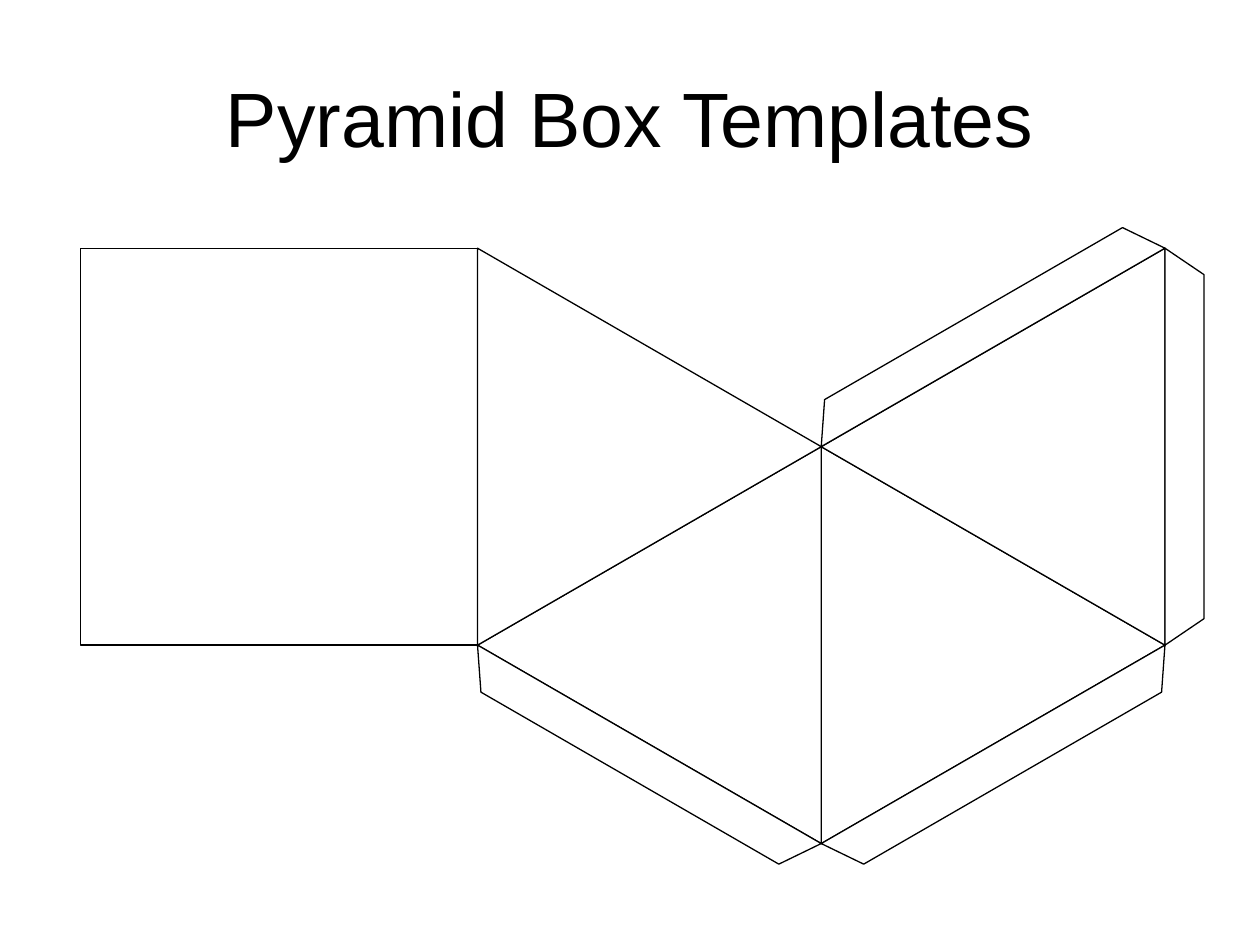
from math import cos, radians, sin, sqrt

from pptx import Presentation
from pptx.dml.color import RGBColor
from pptx.enum.shapes import MSO_SHAPE
from pptx.enum.text import MSO_ANCHOR, PP_ALIGN
from pptx.util import Inches, Pt

# Content: one square base, four equilateral sides, four glue tabs
TITLE = "Pyramid Box Templates"
SIDE = 3.15
LEFT, TOP = 0.64, 1.97
ALTITUDE = SIDE * sqrt(3) / 2
TAB_HEIGHT, TAB_INSET = 0.31, 0.21

# Columns and rows of the net's vertices
base_right = LEFT + SIDE
hub_x = base_right + ALTITUDE
far_x = hub_x + ALTITUDE
lower_left = (base_right, TOP + SIDE)
hub, bottom = (hub_x, TOP + SIDE / 2), (hub_x, TOP + SIDE * 1.5)
upper_right, lower_right = (far_x, TOP), (far_x, TOP + SIDE)

# Each triangle: apex and the direction it points, clockwise from up
TRIANGLES = [(hub, 330), (bottom, 150), (hub, 90), (upper_right, 30)]
# Each tab: the two ends of its fold and its outward direction
TABS = [
    (lower_left, bottom, 210),
    (upper_right, lower_right, 90),
    (hub, upper_right, 330),
    (bottom, lower_right, 150),
]
# Tab outline with the fold at the bottom
TAB_OUTLINE = [
    (0, TAB_HEIGHT),
    (TAB_INSET, 0),
    (SIDE - TAB_INSET, 0),
    (SIDE, TAB_HEIGHT),
]


def color(value):
    return RGBColor.from_string(value)


def move(point, angle, distance):
    x, y = point
    return x + distance * sin(radians(angle)), y - distance * cos(radians(angle))


def style(shape):
    shape.shadow.inherit = False
    shape.fill.solid()
    shape.fill.fore_color.rgb = color("FFFFFF")
    shape.line.color.rgb = color("000000")
    shape.line.width = Pt(0.75)


def place(shape, center, width, height, angle):
    x, y = center
    box = {"left": x - width / 2, "top": y - height / 2, "width": width, "height": height}
    for name, value in box.items():
        setattr(shape, name, Inches(value))
    shape.rotation = angle
    style(shape)


def add_triangle(shapes, apex, angle):
    shape = shapes.add_shape(MSO_SHAPE.ISOSCELES_TRIANGLE, 0, 0, 0, 0)
    place(shape, move(apex, angle, -ALTITUDE / 2), SIDE, ALTITUDE, angle)


def add_tab(shapes, fold_start, fold_end, angle):
    start, *others = [(Inches(x), Inches(y)) for x, y in TAB_OUTLINE]
    builder = shapes.build_freeform(*start)
    builder.add_line_segments(others, close=True)
    fold_middle = [(a + b) / 2 for a, b in zip(fold_start, fold_end)]
    center = move(fold_middle, angle, TAB_HEIGHT / 2)
    place(builder.convert_to_shape(), center, SIDE, TAB_HEIGHT, angle)


presentation = Presentation()
presentation.slide_width, presentation.slide_height = Inches(10), Inches(7.5)
slide = presentation.slides.add_slide(presentation.slide_layouts[6])

# Base, sides and glue tabs
base = slide.shapes.add_shape(MSO_SHAPE.RECTANGLE, 0, 0, 0, 0)
place(base, (LEFT + SIDE / 2, TOP + SIDE / 2), SIDE, SIDE, 0)
for triangle in TRIANGLES:
    add_triangle(slide.shapes, *triangle)
for tab in TABS:
    add_tab(slide.shapes, *tab)

# Title
title = slide.shapes.add_textbox(Inches(0.5), Inches(0.3), Inches(9), Inches(1.25))
title.text_frame.word_wrap = True
title.text_frame.vertical_anchor = MSO_ANCHOR.MIDDLE
paragraph = title.text_frame.paragraphs[0]
paragraph.alignment = PP_ALIGN.CENTER
run = paragraph.add_run()
run.text = TITLE
for name, value in {"name": "Arial", "size": Pt(44)}.items():
    setattr(run.font, name, value)
run.font.color.rgb = color("000000")

presentation.save("out.pptx")
